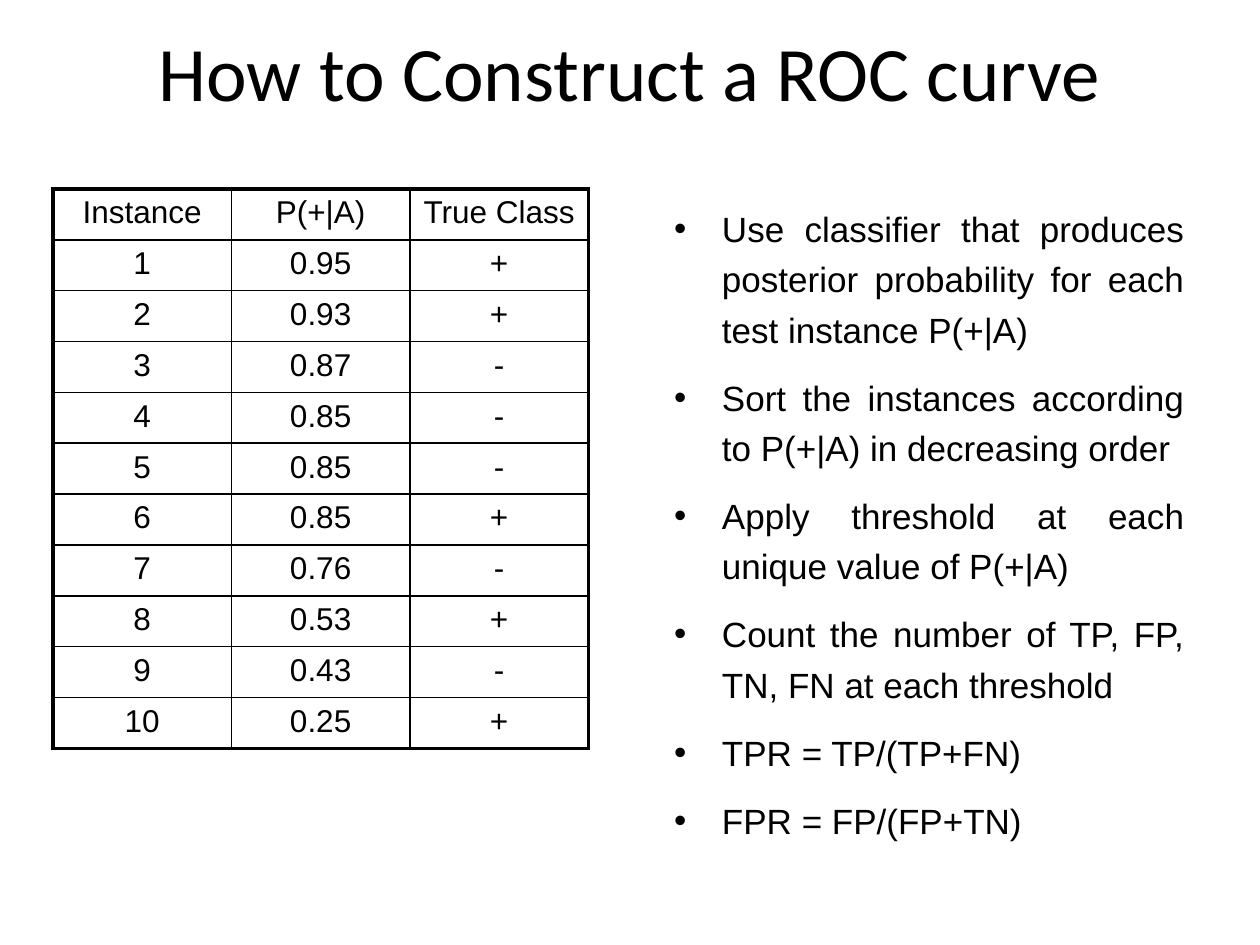
from lxml import etree
from pptx import Presentation
from pptx import util as u
from pptx.dml.color import RGBColor
from pptx.enum import text
from pptx.oxml import ns

BLACK = RGBColor(0, 0, 0)
THIN, THICK = 1, 2.25
HEADS = ("Instance", "P(+|A)", "True Class")
SCORES = ("0.95", "0.93", "0.87", "0.85", "0.85", "0.85", "0.76", "0.53", "0.43", "0.25")
SIGNS = "++---+-+-+"
STEPS = (
    "Use classifier that produces posterior probability for each test instance P(+|A)",
    "Sort the instances according to P(+|A) in decreasing order",
    "Apply threshold at each unique value of P(+|A)",
    "Count the number of TP, FP, TN, FN at each threshold",
    "TPR = TP/(TP+FN)",
    "FPR = FP/(FP+TN)",
)


def place(shape, left, top, width, height):
    """Move and size a shape, in inches."""
    shape.left, shape.top = u.Inches(left), u.Inches(top)
    shape.width, shape.height = u.Inches(width), u.Inches(height)


def style(para, size, face, align):
    """Format a paragraph and its runs."""
    para.alignment = align
    for run in para.runs:
        run.font.size, run.font.name = u.Pt(size), face
        run.font.color.rgb = BLACK


def edge(cell, side, width):
    """Draw one border of a cell."""
    props = cell._tc.get_or_add_tcPr()
    line = etree.SubElement(props, ns.qn(f"a:ln{side}"), w=str(u.Pt(width)))
    fill = etree.SubElement(line, ns.qn("a:solidFill"))
    etree.SubElement(fill, ns.qn("a:srgbClr"), val=str(BLACK))


def title(slide):
    """Fill the title placeholder."""
    shape = slide.shapes.title
    place(shape, 0.5, 0.08, 9, 0.96)
    frame = shape.text_frame
    frame.text = "How to Construct a ROC curve"
    frame.vertical_anchor = text.MSO_ANCHOR.MIDDLE
    style(frame.paragraphs[0], 44, "Calibri", text.PP_ALIGN.CENTER)


def grid(slide):
    """Add the table of scored instances."""
    ranks = [str(n) for n in range(1, len(SCORES) + 1)]
    rows = [HEADS, *zip(ranks, SCORES, SIGNS)]
    high, wide = len(rows), len(HEADS)
    frame = slide.shapes.add_table(high, wide, u.Inches(0.42), u.Inches(1.5),
                                   u.Inches(4.25), u.Inches(4.44))
    table = frame.table
    table.first_row = table.horz_banding = False
    for r, row in enumerate(rows):
        for c, word in enumerate(row):
            cell = table.cell(r, c)
            cell.text_frame.text = word
            para = cell.text_frame.paragraphs[0]
            para.space_before, para.space_after = u.Pt(1.8), u.Pt(4)
            style(para, 18, "Arial", text.PP_ALIGN.CENTER)
            outer = {"L": c == 0, "R": c == wide - 1, "T": r == 0, "B": r == high - 1}
            for side, thick in outer.items():
                edge(cell, side, THICK if thick else THIN)
            cell.fill.background()


def steps(slide):
    """Fill the body placeholder with the bulleted steps."""
    shape = slide.placeholders[1]
    place(shape, 5.25, 1.53, 4.25, 5.55)
    frame = shape.text_frame
    frame.text = "\n".join(STEPS)
    frame.word_wrap = True
    frame.auto_size = text.MSO_AUTO_SIZE.SHAPE_TO_FIT_TEXT
    frame.vertical_anchor = text.MSO_ANCHOR.TOP
    for para in frame.paragraphs:
        style(para, 20, "Arial", text.PP_ALIGN.JUSTIFY)
        para.line_spacing, para.space_before = 1.2, u.Pt(10)
        props = para._p.get_or_add_pPr()
        props.set("marL", str(u.Inches(0.38)))
        props.set("indent", str(-u.Inches(0.38)))
        etree.SubElement(props, ns.qn("a:buFont"), typeface="Arial")
        etree.SubElement(props, ns.qn("a:buChar"), char="•")


def main():
    """Build and save the slide."""
    deck = Presentation()
    deck.slide_width, deck.slide_height = u.Inches(10), u.Inches(7.5)
    slide = deck.slides.add_slide(deck.slide_layouts[1])
    title(slide)
    grid(slide)
    steps(slide)
    deck.save("out.pptx")


if __name__ == "__main__":
    main()
